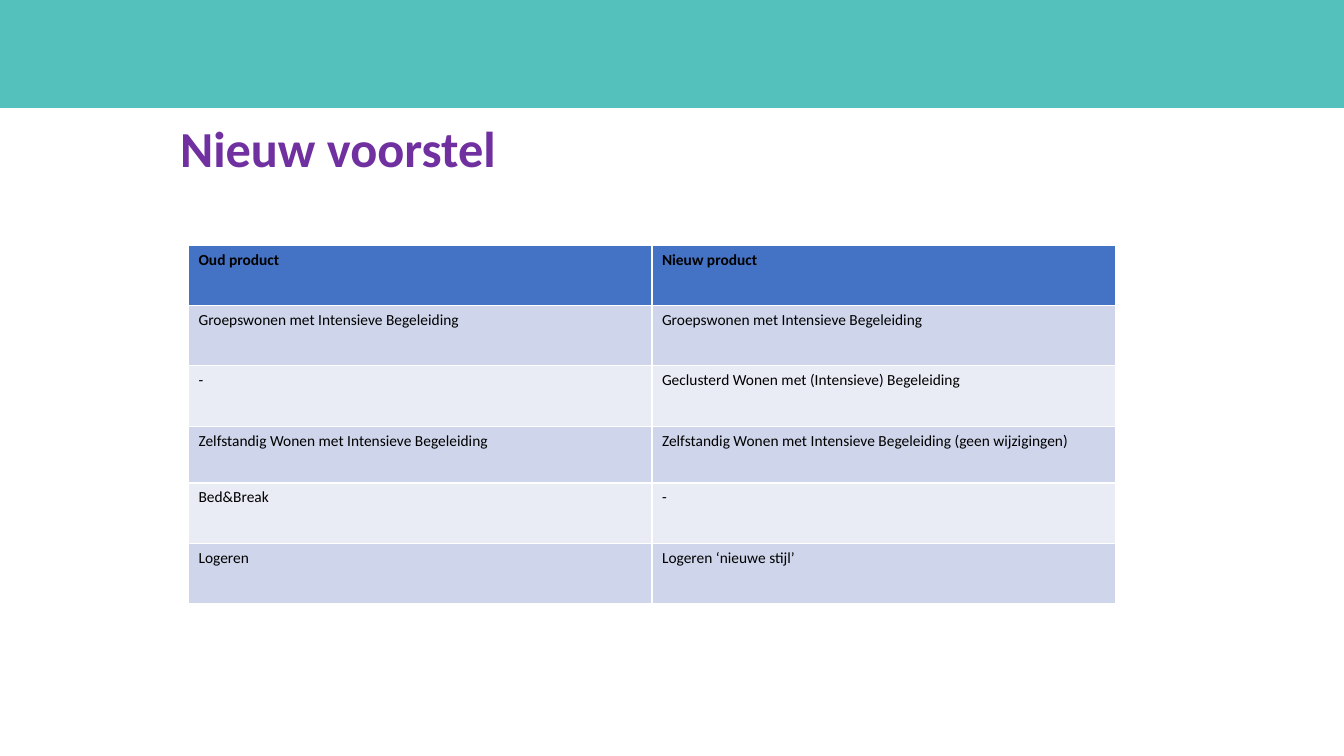
"""Build the slide that sets the old care products beside the new ones."""
from pptx import Presentation
from pptx.dml.color import RGBColor as Rgb
from pptx.enum.shapes import MSO_SHAPE as Shape
from pptx.util import Cm, Pt

TITLE = "Nieuw voorstel"
PRODUCTS = [
    ("Oud product", "Nieuw product"),
    ("Groepswonen met Intensieve Begeleiding", "Groepswonen met Intensieve Begeleiding"),
    ("-", "Geclusterd Wonen met (Intensieve) Begeleiding"),
    ("Zelfstandig Wonen met Intensieve Begeleiding",
     "Zelfstandig Wonen met Intensieve Begeleiding (geen wijzigingen)"),
    ("Bed&Break", "-"),
    ("Logeren", "Logeren ‘nieuwe stijl’"),
]
ROW_HEIGHTS = [1.52, 1.52, 1.52, 1.43, 1.52, 1.52]
COLUMN_WIDTH = 11.68
COLORS = {"banner": "55C1BD", "title": "7030A0", "text": "000000",
          "header": "4472C4", "odd": "CFD5EA", "even": "E9EBF5"}


def paint(fill, color):
    fill.solid()
    fill.fore_color.rgb = Rgb.from_string(COLORS[color])


def style(paragraph, size, color, bold):
    font = paragraph.font
    font.name, font.size, font.bold = "Calibri", Pt(size), bold
    font.color.rgb = Rgb.from_string(COLORS[color])


def add_banner(slide, width):
    banner = slide.shapes.add_shape(Shape.RECTANGLE, 0, 0, width, Cm(2.72))
    banner.shadow.inherit = False
    paint(banner.fill, "banner")
    banner.line.fill.background()


def add_title(slide):
    frame = slide.shapes.add_textbox(Cm(4.29), Cm(3), Cm(28.63), Cm(1.75)).text_frame
    frame.word_wrap = True
    heading = frame.paragraphs[0]
    heading.text = TITLE
    heading.line_spacing = 0.9
    style(heading, 36, "title", True)


def add_products(slide):
    columns = len(PRODUCTS[0])
    table = slide.shapes.add_table(
        len(PRODUCTS), columns, Cm(4.75), Cm(6.18),
        Cm(columns * COLUMN_WIDTH), Cm(sum(ROW_HEIGHTS))).table
    for column in table.columns:
        column.width = Cm(COLUMN_WIDTH)
    for r, (names, height) in enumerate(zip(PRODUCTS, ROW_HEIGHTS)):
        table.rows[r].height = Cm(height)
        band = "header" if r == 0 else "odd" if r % 2 else "even"
        for c, name in enumerate(names):
            cell = table.cell(r, c)
            cell.text = name
            paint(cell.fill, band)
            style(cell.text_frame.paragraphs[0], 11, "text", r == 0)


def main():
    deck = Presentation()
    deck.slide_width, deck.slide_height = Cm(33.87), Cm(19.05)
    slide = deck.slides.add_slide(deck.slide_layouts[6])
    add_banner(slide, deck.slide_width)
    add_title(slide)
    add_products(slide)
    deck.save("out.pptx")


if __name__ == "__main__":
    main()
